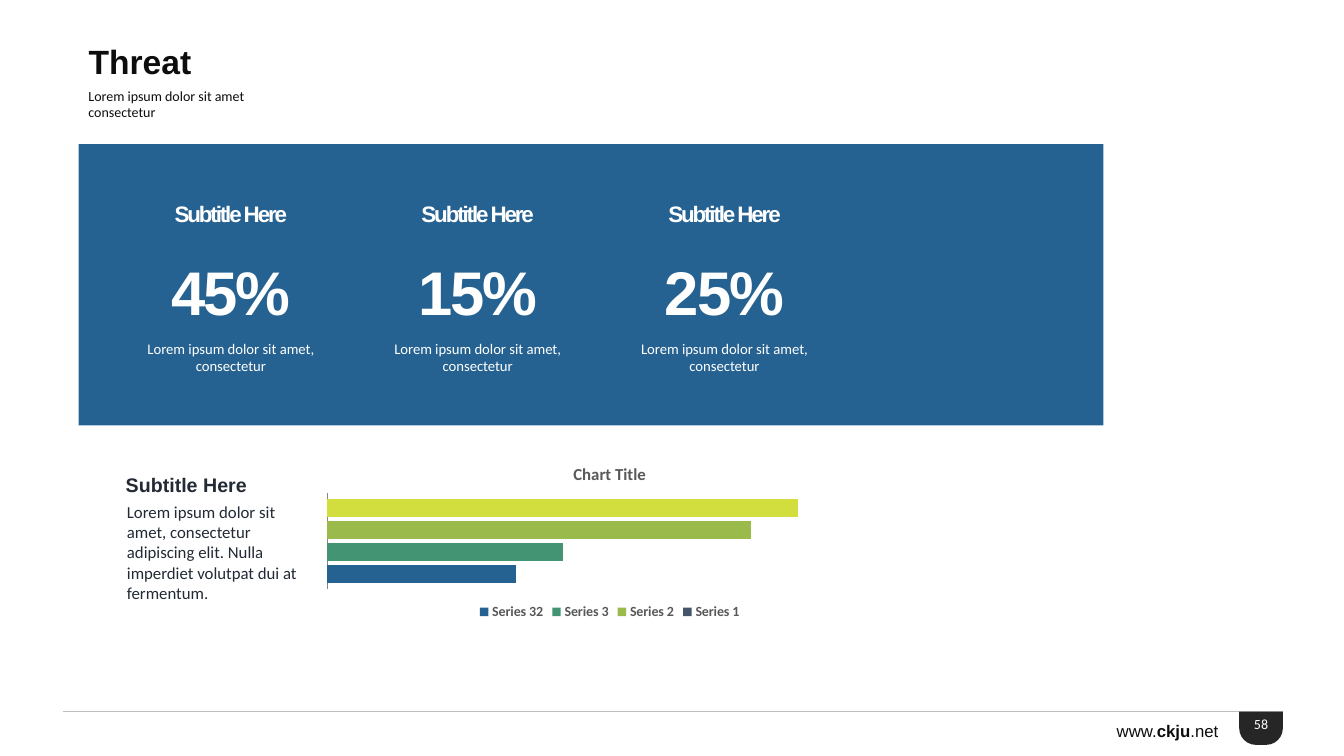
from dataclasses import dataclass

from lxml.etree import SubElement
from pptx import Presentation
from pptx.chart.data import CategoryChartData
from pptx.dml.color import RGBColor
from pptx.enum.chart import XL_CHART_TYPE, XL_LEGEND_POSITION, XL_TICK_LABEL_POSITION, XL_TICK_MARK
from pptx.enum.shapes import MSO_CONNECTOR, MSO_SHAPE
from pptx.enum.text import MSO_ANCHOR, MSO_AUTO_SIZE, PP_ALIGN
from pptx.oxml.ns import qn
from pptx.util import Cm, Pt


@dataclass(frozen=True)
class Theme:
    heading_font: str = "Arial"
    body_font: str = "Calibri"
    ink: str = "0D0D0D"
    slate: str = "222A35"
    white: str = "FFFFFF"
    panel: str = "256291"
    rule: str = "BFBFBF"
    axis: str = "868686"
    tab: str = "262626"
    chart_text: str = "595959"
    series: tuple = ("44546A", "9ABB4B", "429473", "256291")
    highlight: str = "D2DD3E"
    title: float = 24
    figure: float = 44
    subtitle: float = 16
    heading: float = 14
    body: float = 12
    caption: float = 10.5
    small: float = 10


THEME = Theme()


@dataclass(frozen=True)
class Box:
    left: float
    top: float
    width: float
    height: float

    def inner(self, left, top, width, height):
        return Box(self.left + left, self.top + top, width, height)

    def lengths(self):
        return Cm(self.left), Cm(self.top), Cm(self.width), Cm(self.height)


def color(code):
    return RGBColor.from_string(code)


def style_font(font, name, size, code, bold=False):
    font.name, font.size, font.bold = name, Pt(size), bold
    font.color.rgb = color(code)


def add_text(page, box, text, name, size, code, bold=False,
             align=PP_ALIGN.LEFT, anchor=MSO_ANCHOR.MIDDLE, spacing=0):
    frame = page.shapes.add_textbox(*box.lengths()).text_frame
    frame.text = text
    frame.word_wrap = True
    frame.vertical_anchor = anchor
    para = frame.paragraphs[0]
    para.alignment = align
    for span in para.runs:
        style_font(span.font, name, size, code, bold)
        if spacing:
            span._r.get_or_add_rPr().set("spc", str(int(spacing * 100)))
    return para


def add_block(page, kind, box, code):
    shape = page.shapes.add_shape(kind, *box.lengths())
    shape.shadow.inherit = False
    shape.fill.solid()
    shape.fill.fore_color.rgb = color(code)
    shape.line.fill.background()
    return shape


def add_header(page, box):
    title = page.shapes.title
    title.left, title.top, title.width, title.height = box.inner(0, 0, 4.7, 1.27).lengths()
    frame = title.text_frame
    frame.text = "Threat"
    frame.auto_size = MSO_AUTO_SIZE.NONE
    frame.vertical_anchor = MSO_ANCHOR.MIDDLE
    para = frame.paragraphs[0]
    para.alignment = PP_ALIGN.LEFT
    style_font(para.runs[0].font, THEME.heading_font, THEME.title, THEME.ink, True)
    add_text(page, box.inner(0, 1.15, 5.18, 1.12), "Lorem ipsum dolor sit amet consectetur",
             THEME.body_font, THEME.small, THEME.ink)


def add_figure(page, box, value):
    add_text(page, box.inner(0, 0, box.width, 1.12), "Subtitle Here", THEME.heading_font,
             THEME.subtitle, THEME.white, True, PP_ALIGN.CENTER, spacing=-1.5)
    add_text(page, box.inner(0, 1.6, box.width, 1.8), value, THEME.heading_font,
             THEME.figure, THEME.white, True, PP_ALIGN.CENTER, spacing=-1.5)
    add_text(page, box.inner(0, 3.6, box.width, 1.14), "Lorem ipsum dolor sit amet, consectetur",
             THEME.body_font, THEME.caption, THEME.white, align=PP_ALIGN.CENTER,
             anchor=MSO_ANCHOR.TOP)


def add_panel(page, box, values):
    add_block(page, MSO_SHAPE.RECTANGLE, box, THEME.panel)
    for column, value in enumerate(values):
        add_figure(page, box.inner(0.97 + 6.22 * column, 1.2, 5.74, 4.74), value)


def add_summary(page, box):
    add_text(page, box.inner(0, 0, box.width, 1.12), "Subtitle Here",
             THEME.heading_font, THEME.heading, THEME.slate, True)
    add_text(page, box.inner(0.03, 0.86, 5.2, 2.82),
             "Lorem ipsum dolor sit amet, consectetur adipiscing elit. "
             "Nulla imperdiet volutpat dui at fermentum.",
             THEME.body_font, THEME.body, THEME.slate, anchor=MSO_ANCHOR.TOP)


def add_bars(page, box, series):
    data = CategoryChartData()
    data.categories = ["1"]
    for name, value in series.items():
        data.add_series(name, [value])
    chart = page.shapes.add_chart(XL_CHART_TYPE.BAR_CLUSTERED, *box.lengths(), data).chart
    style_font(chart.font, THEME.body_font, THEME.small, THEME.chart_text, True)

    chart.has_title = True
    heading = chart.chart_title.text_frame
    heading.text = "Chart Title"
    style_font(heading.paragraphs[0].runs[0].font, THEME.body_font, THEME.body,
               THEME.chart_text, True)
    chart.has_legend = True
    chart.legend.position = XL_LEGEND_POSITION.BOTTOM
    chart.legend.include_in_layout = False

    for axis in (chart.category_axis, chart.value_axis):
        axis.tick_label_position = XL_TICK_LABEL_POSITION.NONE
        axis.major_tick_mark = axis.minor_tick_mark = XL_TICK_MARK.NONE
    chart.category_axis.reverse_order = True
    chart.category_axis.format.line.color.rgb = color(THEME.axis)
    scale = chart.value_axis
    scale.minimum_scale, scale.maximum_scale = 0, 120
    scale.tick_labels.number_format = "0.00%"
    scale.tick_labels.number_format_is_linked = False
    scale.format.line.fill.background()
    scale.major_gridlines.format.line.color.rgb = color(THEME.white)
    scale.major_gridlines.format.line.width = Pt(0.75)

    plot = chart.plots[0]
    plot.vary_by_categories = False
    plot.gap_width, plot.overlap = 75, -25
    fills = [bar.format.fill for bar in plot.series]
    fills.append(plot.series[0].points[0].format.fill)
    for fill, code in zip(fills, (*THEME.series, THEME.highlight)):
        fill.solid()
        fill.fore_color.rgb = color(code)


def add_footer(page, box, number):
    rule = page.shapes.add_connector(MSO_CONNECTOR.STRAIGHT, Cm(box.left), Cm(box.top),
                                     Cm(box.left + box.width), Cm(box.top))
    rule.line.color.rgb = color(THEME.rule)
    rule.line.width = Pt(0.75)
    SubElement(rule._element.spPr, qn("a:effectLst"))

    address = add_text(page, box.inner(26.2, 0.02, 3.25, 0.97), "www.", THEME.heading_font,
                       THEME.body, THEME.ink, align=PP_ALIGN.CENTER)
    address.line_spacing = 0.9
    for text, bold in (("ckju", True), (".net", False)):
        span = address.add_run()
        span.text = text
        style_font(span.font, THEME.heading_font, THEME.body, THEME.ink, bold)

    tab = add_block(page, MSO_SHAPE.ROUND_2_SAME_RECTANGLE,
                    box.inner(box.width - 1.1, 0, 1.1, 0.84), THEME.tab)
    tab.adjustments[0], tab.adjustments[1] = 0, 0.5
    add_text(page, box.inner(box.width - 1.1, 0.05, 1.1, 0.54), number, THEME.body_font,
             THEME.small, THEME.white, align=PP_ALIGN.CENTER)


def main():
    deck = Presentation()
    deck.slide_width, deck.slide_height = Cm(33.87), Cm(19.05)
    page = deck.slides.add_slide(deck.slide_layouts[5])
    add_footer(page, Box(1.6, 17.93, 30.73, 0.99), "58")
    add_panel(page, Box(1.98, 3.63, 25.83, 7.09), ["45%", "15%", "25%"])
    add_header(page, Box(1.98, 0.91, 5.18, 2.27))
    add_bars(page, Box(7.95, 11.35, 14.83, 4.37),
             {"Series 1": 100, "Series 2": 90, "Series 3": 50, "Series 32": 40})
    add_summary(page, Box(2.92, 11.66, 5.3, 3.68))
    deck.save("out.pptx")


if __name__ == "__main__":
    main()
